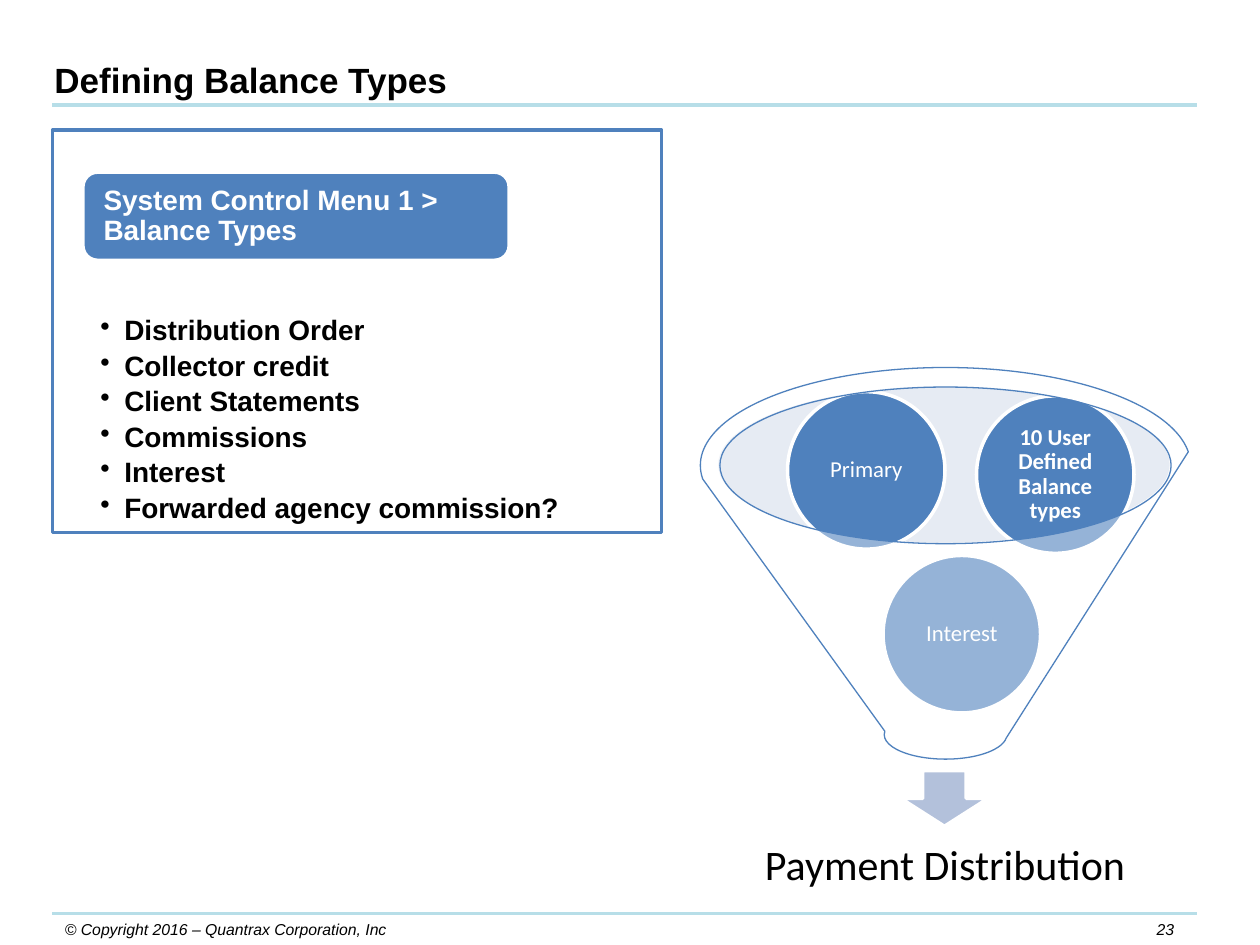
from pptx import Presentation
from pptx.dml.color import RGBColor
from pptx.enum.shapes import MSO_CONNECTOR as Link, MSO_SHAPE as Form
from pptx.enum.text import MSO_ANCHOR as Anchor, PP_ALIGN as Align
from pptx.oxml.ns import qn
from pptx.util import Inches, Pt
from lxml.etree import SubElement as sub

deck = Presentation()
deck.slide_width, deck.slide_height = Inches(10), Inches(7.5)
slide = deck.slides.add_slide(deck.slide_layouts[6])
shapes = slide.shapes
cell = deck.slide_width / 120  # grid of 120 columns by 90 rows
BLUE, PALE, WHITE, BLACK = "4F81BD", "B7DEE8", "FFFFFF", "000000"


def draw(form, grid, fill, line=None, width=2, alpha=None):
    """Add a shape, or a text box when form is None, on the grid."""
    spot = [round(n * cell) for n in grid]
    if form is None:
        return shapes.add_textbox(*spot)
    shape = shapes.add_shape(form, *spot)
    shape.shadow.inherit = False
    shape.fill.solid()
    shape.fill.fore_color.rgb = RGBColor.from_string(fill)
    if alpha:
        tint = shape.fill._xPr.find(qn("a:solidFill"))[0]
        sub(tint, qn("a:alpha"), val=str(alpha * 1000))
    if line:
        shape.line.color.rgb = RGBColor.from_string(line)
        shape.line.width = Pt(width)
    else:
        shape.line.fill.background()
    return shape


def write(shape, lines, size, color, face="Arial", bold=False, italic=False,
          align=Align.LEFT, anchor=Anchor.TOP, pad=(0.1, 0.05, 0.1, 0.05),
          space=1, after=0, bullet=False):
    """Fill a shape with paragraphs; pad is left, top, right, bottom."""
    frame = shape.text_frame
    frame.word_wrap = True
    frame.vertical_anchor = anchor
    (frame.margin_left, frame.margin_top,
     frame.margin_right, frame.margin_bottom) = [Inches(n) for n in pad]
    for i, line in enumerate(lines):
        para = frame.add_paragraph() if i else frame.paragraphs[0]
        para.alignment = align
        para.line_spacing = space
        para.space_after = Pt(after)
        if bullet:
            props = para._p.get_or_add_pPr()
            props.set("marL", str(Inches(0.19)))
            props.set("indent", str(-Inches(0.19)))
            sub(props, qn("a:buChar"), char="•")
        run = para.add_run()
        run.text = line
        font = run.font
        font.name, font.size = face, Pt(size)
        font.bold, font.italic = bold, italic
        font.color.rgb = RGBColor.from_string(color)


# Rules under the title and above the footer
for row in (10, 87):
    y = round(row * cell)
    rule = shapes.add_connector(Link.STRAIGHT, round(5 * cell), y, round(114 * cell), y)
    rule.line.color.rgb = RGBColor.from_string(PALE)
    rule.line.width = Pt(2.25)
    sub(rule._element.spPr, qn("a:effectLst"))

# Title and footer
write(draw(None, (4, 5, 87, 5.3), None), ["Defining Balance Types"], 20, BLACK, bold=True)
write(draw(None, (5, 87, 39, 3), None),
      ["© Copyright 2016 – Quantrax Corporation, Inc"], 9, BLACK, italic=True)
write(draw(None, (108, 87, 6, 3), None), ["23"], 9, BLACK, italic=True, align=Align.CENTER)

# Mouth of the funnel, arrow and result
draw(Form.OVAL, (68.4, 36.8, 43, 14.9), "C2CDE1", alpha=40)
draw(Form.DOWN_ARROW, (85.8, 73.4, 8.3, 5.3), "B3C1DB", WHITE)
write(draw(None, (70, 77.6, 40, 10), None), ["Payment Distribution"], 24, BLACK, "Calibri",
      align=Align.CENTER, anchor=Anchor.MIDDLE, pad=(0.19,) * 4, space=0.9)

# Balls, then the funnel over them
balls = [("Interest", 84.1, 52.9, False), ("Primary", 75, 37.3, False),
         ("10 User Defined Balance types", 93, 37.7, True)]
for name, x, y, bold in balls:
    write(draw(Form.OVAL, (x, y, 15, 15), BLUE, WHITE), [name], 13, WHITE, "Calibri", bold,
          align=Align.CENTER, anchor=Anchor.MIDDLE, pad=(0.02,) * 4, space=0.9)
draw(Form.FUNNEL, (66.7, 35, 46.7, 37.3), WHITE, BLUE, 0.75, alpha=40)

# Topic box with its label
topics = ["Distribution Order", "Collector credit", "Client Statements",
          "Commissions", "Interest", "Forwarded agency commission?"]
write(draw(Form.RECTANGLE, (5, 12.4, 58, 38.3), WHITE, BLUE, alpha=90), topics, 16, BLACK,
      bold=True, pad=(0.38, 1.48, 0.38, 0.12), space=0.9, after=3, bullet=True)
write(draw(Form.ROUNDED_RECTANGLE, (7.9, 16.4, 40.6, 8.4), BLUE, WHITE),
      ["System Control Menu 1 > Balance Types"], 16, WHITE, bold=True,
      anchor=Anchor.MIDDLE, pad=(0.13, 0, 0.13, 0), space=0.9)

deck.save("out.pptx")
